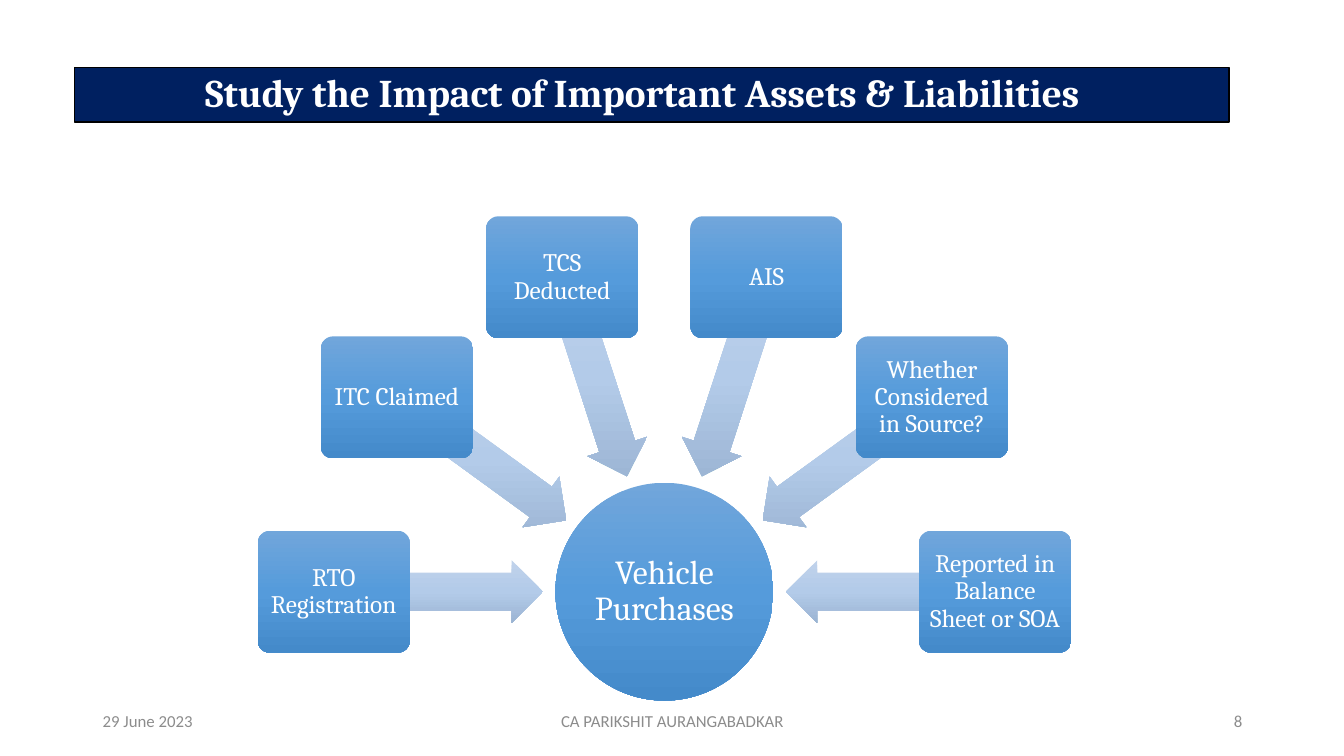
from copy import deepcopy
from math import cos, radians, sin

from pptx import Presentation
from pptx.dml.color import RGBColor
from pptx.enum import shapes, text
from pptx.oxml.ns import qn
from pptx.util import Inches, Pt

KIND = shapes.MSO_SHAPE
ALIGN = text.PP_ALIGN


def colour(code):
    return RGBColor.from_string(code)


class Slide:
    blue = ("71A6DB", "559BDB", "448ACA")
    pale = ("C0D2EB", "B3CBE9", "9BB4D3")
    serif = {"name": "Cambria", "size": Pt(18), "bold": False}
    small = {"name": "Calibri", "size": Pt(12), "bold": False}

    def __init__(self, deck):
        self.page = deck.slides.add_slide(deck.slide_layouts[5])

    def add_words(self, box, words, font, ink="FFFFFF", align=ALIGN.CENTER,
                  spacing=0.9, **margins):
        frame = box.text_frame
        settings = {"word_wrap": True, "auto_size": text.MSO_AUTO_SIZE.NONE,
                    "vertical_anchor": text.MSO_ANCHOR.MIDDLE, **margins}
        for key, value in settings.items():
            setattr(frame, key, value)
        para = frame.paragraphs[0]
        para.alignment, para.line_spacing = align, spacing
        span = para.add_run()
        span.text = words
        for key, value in font.items():
            setattr(span.font, key, value)
        span.font.color.rgb = colour(ink)

    def title(self, words, left, top, width, height):
        box = self.page.shapes.title
        place = {"left": left, "top": top, "width": width, "height": height}
        for key, value in place.items():
            setattr(box, key, Inches(value))
        box.fill.solid()
        box.fill.fore_color.rgb = colour("002060")
        box.line.color.rgb = colour("000000")
        box.line.width = Pt(1)
        font = {**self.serif, "size": Pt(28), "bold": True}
        self.add_words(box, words, font, margin_right=Inches(0.29))

    def shape(self, kind, centre_x, centre_y, width, height, shades):
        """Add a borderless shape, shaded from top to bottom, by its centre."""
        box = self.page.shapes.add_shape(
            kind, Inches(centre_x - width / 2), Inches(centre_y - height / 2),
            Inches(width), Inches(height))
        box.shadow.inherit = False
        box.line.fill.background()
        box.fill.gradient()
        box.fill.gradient_angle = 270
        gradient = box.element.spPr.find(qn("a:gradFill"))
        gradient.set("rotWithShape", "0")
        stops = gradient.find(qn("a:gsLst"))
        stops.append(deepcopy(stops[-1]))
        for stop, position, shade in zip(box.fill.gradient_stops, (0, 0.5, 1), shades):
            stop.position = position
            stop.color.rgb = colour(shade)
        return box

    def label(self, box, words, size, margin):
        sides = ("left", "top", "right", "bottom")
        margins = {f"margin_{side}": Inches(margin) for side in sides}
        self.add_words(box, words, {**self.serif, "size": Pt(size)}, **margins)

    def hub(self, words, x, y):
        box = self.shape(KIND.OVAL, x, y, 2.16, 2.16, self.blue)
        self.label(box, words, 24, 0.02)

    def arrow(self, x, y, angle):
        box = self.shape(KIND.LEFT_ARROW, x, y, 2.07, 0.62, self.pale)
        box.adjustments[0], box.adjustments[1] = 0.6, 0.5
        box.rotation = angle

    def card(self, words, x, y):
        box = self.shape(KIND.ROUNDED_RECTANGLE, x, y, 1.51, 1.21, self.blue)
        box.adjustments[0] = 0.1
        self.label(box, words, 18, 0.04)

    def footer(self, words, left, width, align):
        box = self.page.shapes.add_textbox(
            Inches(left), Inches(6.95), Inches(width), Inches(0.4))
        self.add_words(box, words, self.small, "8C8C8C", align, 1)


def main():
    deck = Presentation()
    deck.slide_width, deck.slide_height = Inches(13.33), Inches(7.5)
    slide = Slide(deck)
    slide.title("Study the Impact of Important Assets & Liabilities",
                0.74, 0.67, 11.45, 0.54)

    # Hub with cards on a half circle, each pointing inwards
    hub_x, hub_y = 6.59, 5.87
    arrow_radius, card_radius = 2.24, 3.28
    slide.hub("Vehicle Purchases", hub_x, hub_y)
    topics = ("RTO Registration", "ITC Claimed", "TCS Deducted", "AIS",
              "Whether Considered in Source?", "Reported in Balance Sheet or SOA")
    step = 180 / (len(topics) - 1)
    for index, topic in enumerate(topics):
        angle = 180 + index * step
        across, down = cos(radians(angle)), sin(radians(angle))
        slide.arrow(hub_x + arrow_radius * across, hub_y + arrow_radius * down, angle)
        slide.card(topic, hub_x + card_radius * across, hub_y + card_radius * down)

    # Footer
    slide.footer("29 June 2023", 0.92, 3, ALIGN.LEFT)
    slide.footer("CA PARIKSHIT AURANGABADKAR", 4.42, 4.5, ALIGN.CENTER)
    slide.footer("8", 9.42, 3, ALIGN.RIGHT)

    deck.save("out.pptx")


if __name__ == "__main__":
    main()
